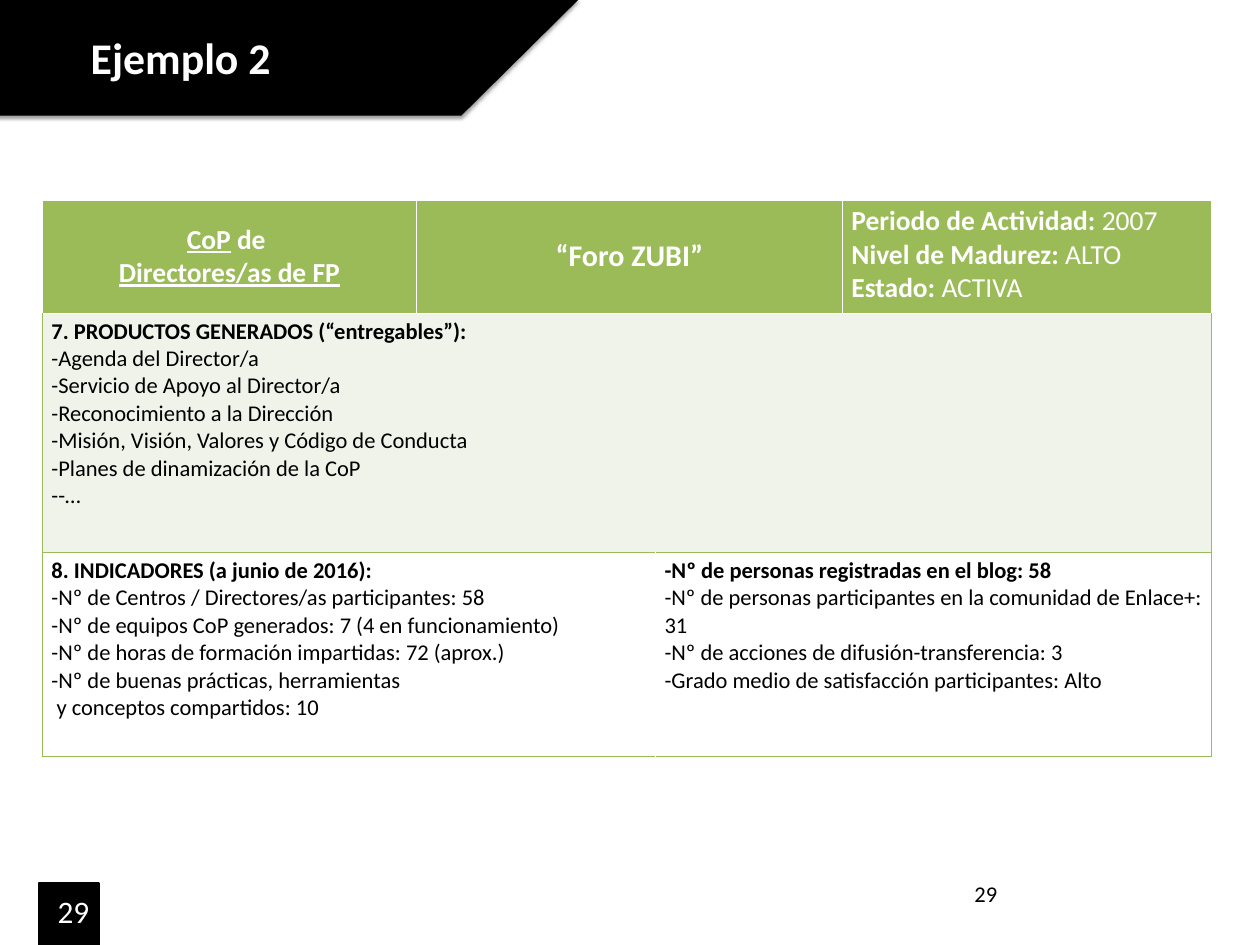
from lxml.etree import SubElement
from pptx import Presentation
from pptx.dml.color import RGBColor
from pptx.enum.shapes import MSO_SHAPE
from pptx.enum.text import MSO_ANCHOR, PP_ALIGN
from pptx.oxml import parse_xml
from pptx.oxml.ns import nsdecls, qn
from pptx.util import Pt

BLACK, WHITE = "000000", "FFFFFF"
GREEN, PALE_GREEN = "9BBB59", "EFF3EA"


def color(value):
    return RGBColor.from_string(value)


class SlideBuilder:
    font_name = "Calibri"

    def __init__(self, slide):
        self.slide = slide

    def set_paragraphs(self, frame, paragraphs, size, text_color, align=PP_ALIGN.LEFT):
        """Each paragraph is a list of (text, format values) runs."""
        for index, runs in enumerate(paragraphs):
            paragraph = frame.paragraphs[0] if index == 0 else frame.add_paragraph()
            paragraph.alignment = align
            for text, values in runs:
                if values.get("bullet"):
                    properties = paragraph._p.get_or_add_pPr()
                    properties.set("marL", "0")
                    properties.set("indent", "0")
                    SubElement(properties, qn("a:buFont")).set("typeface", self.font_name)
                    SubElement(properties, qn("a:buChar")).set("char", "-")
                run = paragraph.add_run()
                run.text = text
                run.font.color.rgb = color(text_color)
                font_values = {"name": self.font_name, "size": Pt(size),
                               "bold": values.get("bold", False),
                               "underline": values.get("underline", False)}
                for name, value in font_values.items():
                    setattr(run.font, name, value)

    def add_text(self, text, left, top, width, height, size, text_color, bold=False):
        box = self.slide.shapes.add_textbox(Pt(left), Pt(top), Pt(width), Pt(height))
        box.text_frame.word_wrap = True
        self.set_paragraphs(box.text_frame, [[(text, {"bold": bold})]], size, text_color)

    def add_block(self, kind, left, top, width, height, fill, line_width=0):
        shape = self.slide.shapes.add_shape(kind, Pt(left), Pt(top), Pt(width), Pt(height))
        shape.shadow.inherit = False
        shape.fill.solid()
        shape.fill.fore_color.rgb = color(fill)
        if line_width:
            shape.line.color.rgb = color(fill)
            shape.line.width = Pt(line_width)
        else:
            shape.line.fill.background()
        return shape

    def add_shadow(self, shape, shadow_color, opacity, blur, distance):
        effects = shape._element.spPr.find(qn("a:effectLst"))
        effects.append(parse_xml(
            f'<a:outerShdw {nsdecls("a")} blurRad="{Pt(blur)}" dist="{Pt(distance)}" '
            f'dir="5400000" rotWithShape="0"><a:srgbClr val="{shadow_color}">'
            f'<a:alpha val="{opacity * 1000}"/></a:srgbClr></a:outerShdw>'))

    def add_table(self, left, top, widths, heights):
        frame = self.slide.shapes.add_table(len(heights), len(widths), Pt(left), Pt(top),
                                            Pt(sum(widths)), Pt(sum(heights)))
        table = frame.table
        table.horz_banding = False
        for column, width in zip(table.columns, widths):
            column.width = Pt(width)
        for row, height in zip(table.rows, heights):
            row.height = Pt(height)
        return table

    def fill_cell(self, table, row, columns, paragraphs, size, text_color, fill, borders,
                  align=PP_ALIGN.LEFT, anchor=MSO_ANCHOR.TOP):
        """Merge the (first, last) columns; borders gives left, right, top and bottom colours."""
        first, last = columns
        cell = table.cell(row, first)
        if last > first:
            cell.merge(table.cell(row, last))
        cell.vertical_anchor = anchor
        for column in range(first, last + 1):
            part = table.cell(row, column)
            part.fill.solid()
            part.fill.fore_color.rgb = color(fill)
            properties = part._tc.get_or_add_tcPr()
            for index, (side, border) in enumerate(zip("LRTB", borders)):
                properties.insert(index, parse_xml(
                    f'<a:ln{side} {nsdecls("a")} w="{Pt(1)}"><a:solidFill>'
                    f'<a:srgbClr val="{border}"/></a:solidFill></a:ln{side}>'))
        self.set_paragraphs(cell.text_frame, paragraphs, size, text_color, align)


def plain(*lines):
    return [[(line, {})] for line in lines]


def bullets(*lines):
    return [[(line, {"bullet": True})] for line in lines]


def heading(text):
    return [[(text, {"bold": True})]]


def main():
    presentation = Presentation()
    presentation.slide_width, presentation.slide_height = Pt(1008), Pt(756)
    builder = SlideBuilder(presentation.slides.add_slide(presentation.slide_layouts[6]))

    builder.add_block(MSO_SHAPE.RECTANGLE, 31, 706.5, 48, 49.5, BLACK, 2)
    builder.add_text("29", 772.5, 700.5, 235.5, 40, 18, BLACK)

    table = builder.add_table(34, 160, [299, 191.5, 149.5, 295.5], [90.5, 191.5, 163.5])
    bold, underlined = {"bold": True}, {"bold": True, "underline": True}
    centered = {"align": PP_ALIGN.CENTER, "anchor": MSO_ANCHOR.MIDDLE}
    header_borders = [WHITE] * 4
    community = [[("CoP", underlined), (" de ", bold)], [("Directores/as de FP", underlined)]]
    facts = {"Periodo de Actividad: ": "2007", "Nivel de Madurez: ": "ALTO", "Estado: ": "ACTIVA"}
    status = [[(label, bold), (value, {})] for label, value in facts.items()]
    builder.fill_cell(table, 0, (0, 0), community, 22, WHITE, GREEN, header_borders, **centered)
    builder.fill_cell(table, 0, (1, 2), heading("“Foro ZUBI”"), 24, WHITE, GREEN,
                      header_borders, **centered)
    builder.fill_cell(table, 0, (3, 3), status, 22, WHITE, GREEN, header_borders)

    products = (heading("7. PRODUCTOS GENERADOS (“entregables”):")
                + plain("-Agenda del Director/a")
                + bullets("Servicio de Apoyo al Director/a", "Reconocimiento a la Dirección",
                          "Misión, Visión, Valores y Código de Conducta",
                          "Planes de dinamización de la CoP", "-…"))
    builder.fill_cell(table, 1, (0, 3), products, 18, BLACK, PALE_GREEN,
                      [GREEN, GREEN, WHITE, GREEN])

    indicators = heading("8. INDICADORES (a junio de 2016):") + plain(
        "-Nº de Centros / Directores/as participantes: 58",
        "-Nº de equipos CoP generados: 7 (4 en funcionamiento)",
        "-Nº de horas de formación impartidas: 72 (aprox.)",
        "-Nº de buenas prácticas, herramientas",
        " y conceptos compartidos: 10")
    online_indicators = heading("-Nº de personas registradas en el blog: 58") + plain(
        "-Nº de personas participantes en la comunidad de Enlace+: 31",
        "-Nº de acciones de difusión-transferencia: 3",
        "-Grado medio de satisfacción participantes: Alto")
    builder.fill_cell(table, 2, (0, 1), indicators, 18, BLACK, WHITE,
                      [GREEN, WHITE, GREEN, GREEN])
    builder.fill_cell(table, 2, (2, 3), online_indicators, 18, BLACK, WHITE,
                      [WHITE, GREEN, GREEN, GREEN])

    banner = builder.add_block(MSO_SHAPE.PARALLELOGRAM, -129.5, -0.5, 592.5, 93, BLACK)
    banner.adjustments[0] = 1.01
    builder.add_shadow(banner, BLACK, 38, 3, 1.5)
    builder.add_text("Ejemplo 2", 65.5, 21, 374.5, 50, 35, WHITE, bold=True)
    builder.add_text("29", 39, 710.5, 235.5, 40, 25, WHITE)

    presentation.save("out.pptx")


if __name__ == "__main__":
    main()
